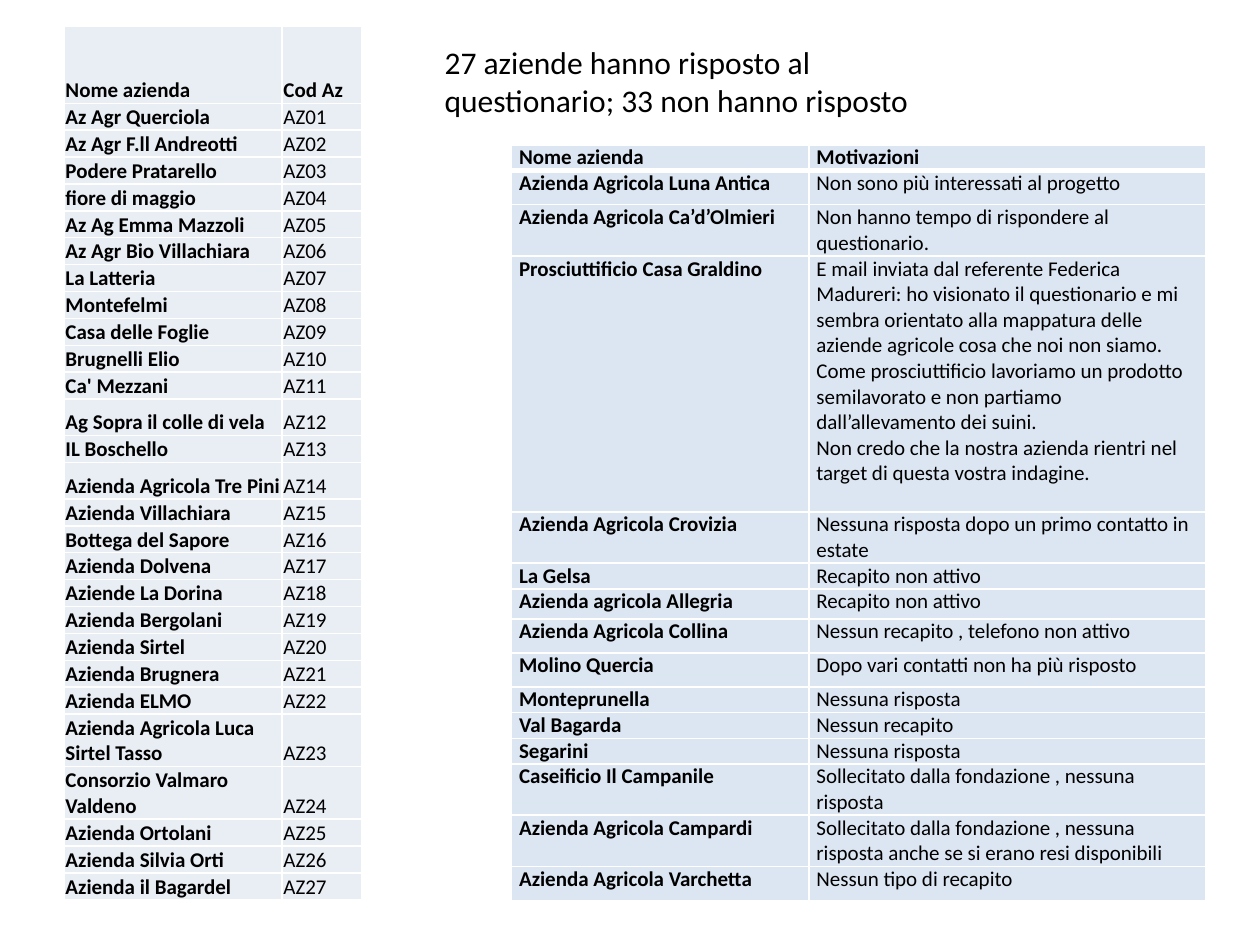
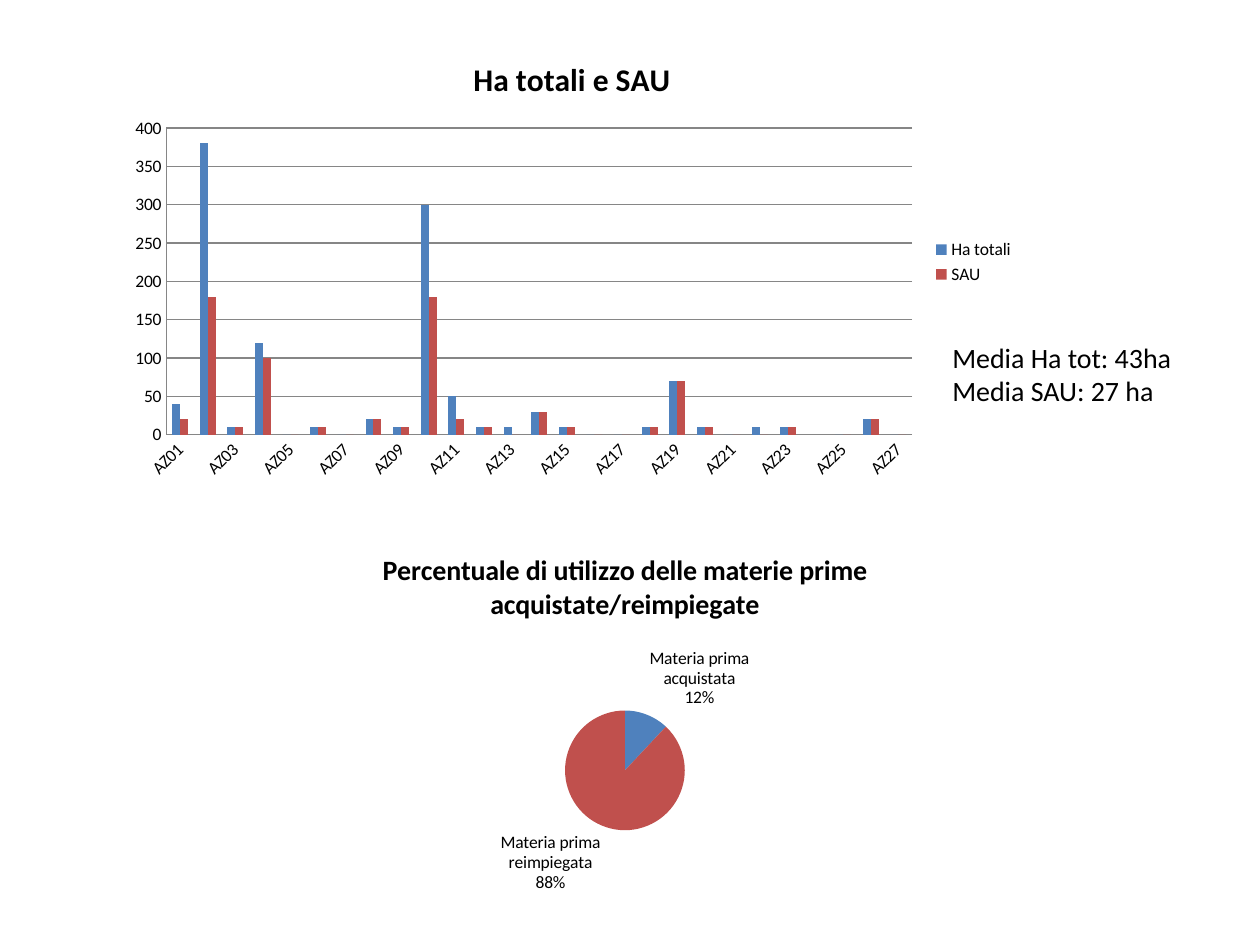
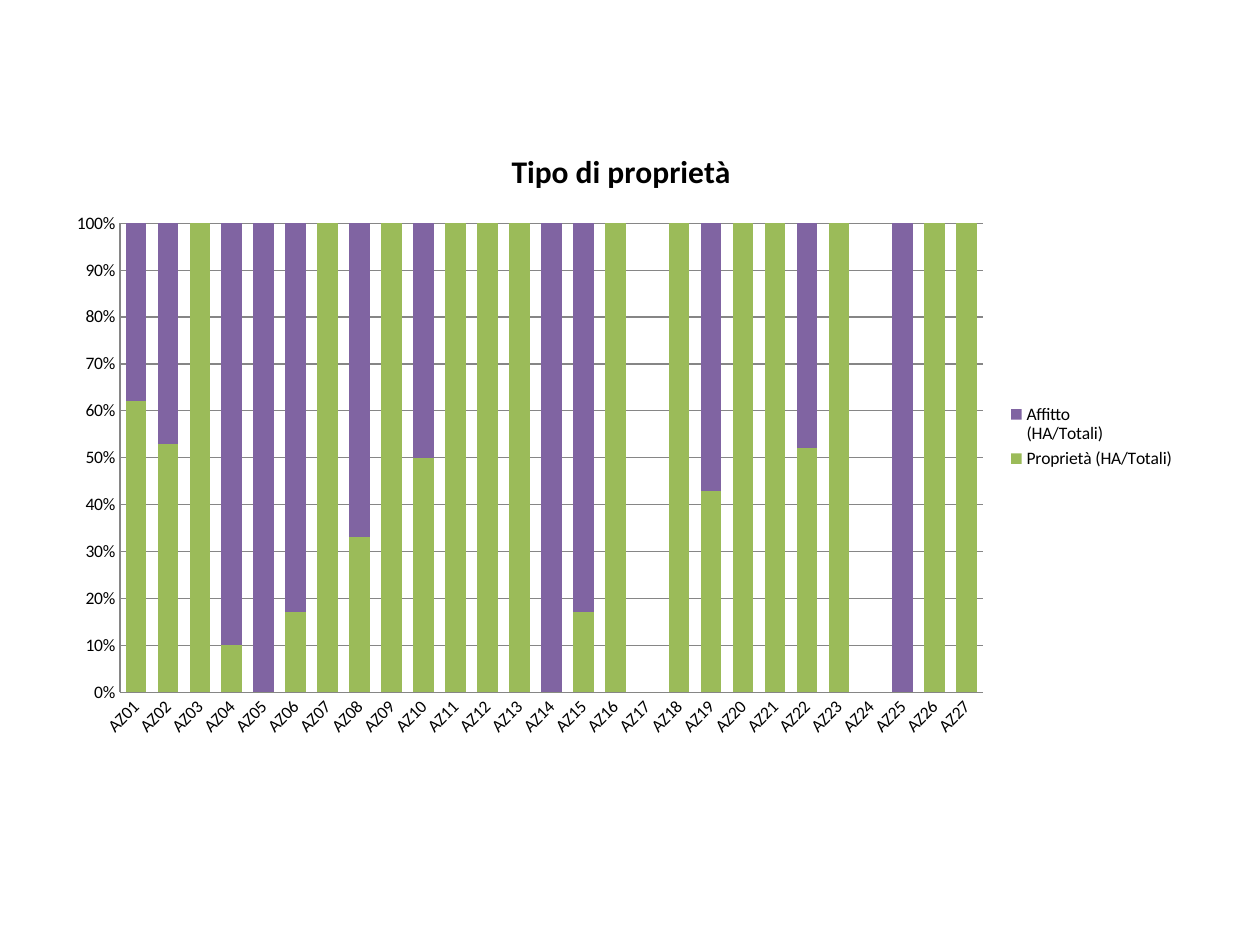
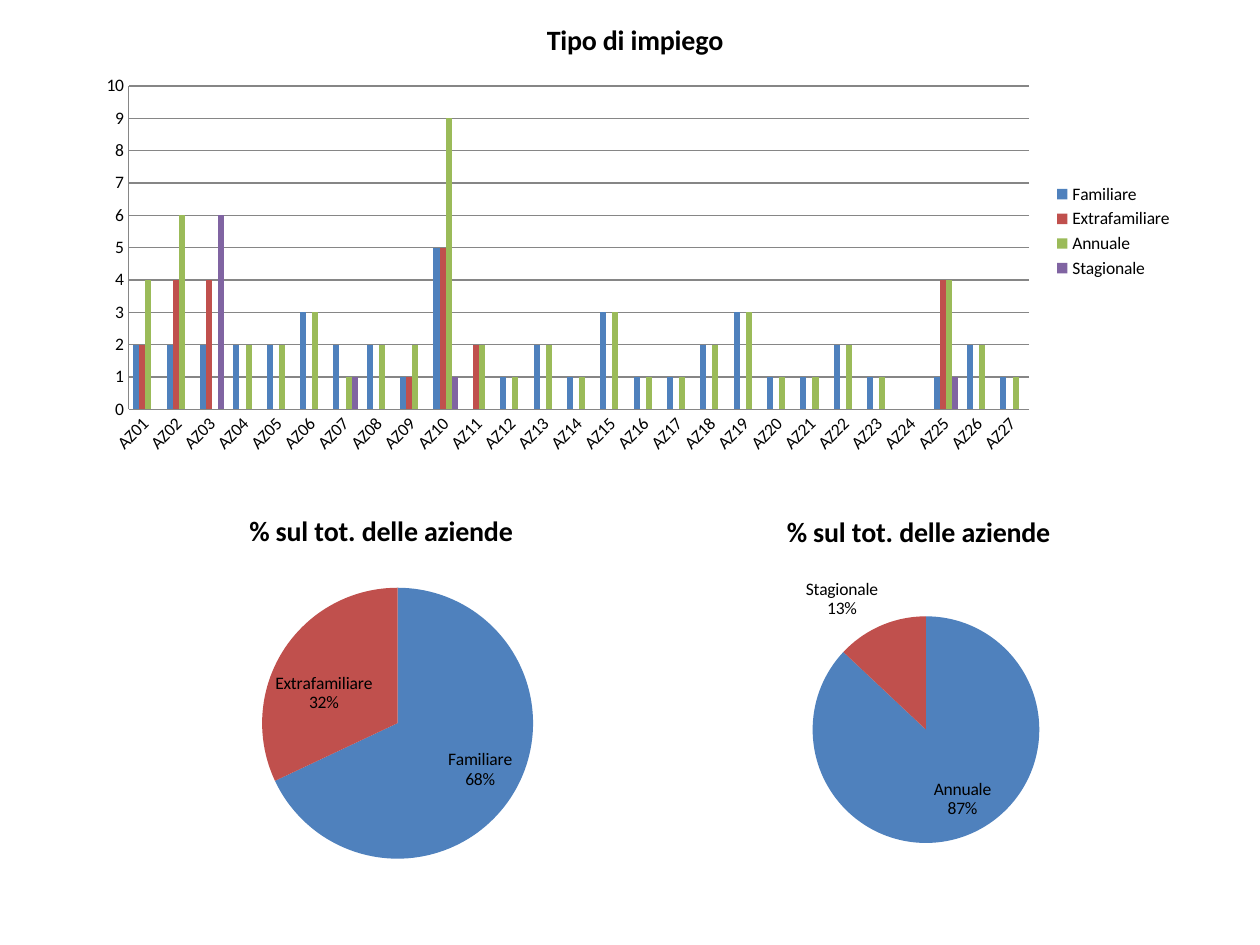
from lxml.etree import SubElement as Sub
from pptx import Presentation
from pptx.chart.data import CategoryChartData as Data
from pptx.dml.color import RGBColor as RGB
from pptx.enum.chart import XL_CHART_TYPE as Kind, XL_LABEL_POSITION as Spot
from pptx.enum.chart import XL_LEGEND_POSITION as Side, XL_TICK_MARK as Tick
from pptx.enum.text import MSO_ANCHOR as Anchor, MSO_AUTO_SIZE as Auto
from pptx.oxml.ns import qn
from pptx.util import Inches, Pt

FONT = "Calibri"
BLACK = RGB(0, 0, 0)
GREY = RGB(0x86, 0x86, 0x86)
PALE = RGB(0xE9, 0xED, 0xF4)
SKY = RGB(0xDC, 0xE6, 0xF2)
BLUE = RGB(0x4F, 0x81, 0xBD)
RED = RGB(0xC0, 0x50, 0x4D)
GREEN = RGB(0x9B, 0xBB, 0x59)
PURPLE = RGB(0x80, 0x64, 0xA2)

deck = Presentation()
deck.slide_width = Inches(10)
deck.slide_height = Inches(7.5)
COL = deck.slide_width // 100
ROW = deck.slide_height // 75


def span(x, y, w, h):
    return int(x * COL), int(y * ROW), int(w * COL), int(h * ROW)


def write(para, text, size, bold=False):
    run = para.add_run()
    run.text = text
    run.font.name = FONT
    run.font.size = Pt(size)
    run.font.bold = bold
    run.font.color.rgb = BLACK


slides = [deck.slides.add_slide(deck.slide_layouts[6]) for _ in range(4)]
codes = [f"AZ{n:02}" for n in range(1, 28)]

farms = [
    "Az Agr Querciola", "Az Agr F.ll Andreotti", "Podere Pratarello",
    "fiore di maggio", "Az Ag Emma Mazzoli", "Az Agr Bio Villachiara",
    "La Latteria", "Montefelmi", "Casa delle Foglie", "Brugnelli Elio",
    "Ca' Mezzani", "Ag Sopra il colle di vela", "IL Boschello",
    "Azienda Agricola Tre Pini", "Azienda Villachiara", "Bottega del Sapore",
    "Azienda Dolvena", "Aziende La Dorina", "Azienda Bergolani",
    "Azienda Sirtel", "Azienda Brugnera", "Azienda ELMO",
    "Azienda Agricola Luca Sirtel Tasso", "Consorzio Valmaro Valdeno",
    "Azienda Ortolani", "Azienda Silvia Orti", "Azienda il Bagardel",
]
mail = (
    "E mail inviata dal referente Federica Madureri: ho visionato il "
    "questionario e mi sembra orientato alla mappatura delle aziende agricole "
    "cosa che noi non siamo.\n"
    "Come prosciuttificio lavoriamo un prodotto semilavorato e non partiamo "
    "dall’allevamento dei suini.\n"
    "Non credo che la nostra azienda rientri nel target di questa vostra "
    "indagine."
)
causes = [
    ("Nome azienda", "Motivazioni"),
    ("Azienda Agricola Luna Antica", "Non sono più interessati al progetto"),
    ("Azienda Agricola Ca’d’Olmieri",
     "Non hanno tempo di rispondere al questionario."),
    ("Prosciuttificio Casa Graldino", mail),
    ("Azienda Agricola Crovizia",
     "Nessuna risposta dopo un primo contatto in estate"),
    ("La Gelsa", "Recapito non attivo"),
    ("Azienda agricola Allegria", "Recapito non attivo"),
    ("Azienda Agricola Collina", "Nessun recapito , telefono non attivo"),
    ("Molino Quercia", "Dopo vari contatti non ha più risposto"),
    ("Monteprunella", "Nessuna risposta"),
    ("Val Bagarda", "Nessun recapito"),
    ("Segarini", "Nessuna risposta"),
    ("Caseificio Il Campanile",
     "Sollecitato dalla fondazione , nessuna risposta"),
    ("Azienda Agricola Campardi",
     "Sollecitato dalla fondazione , nessuna risposta anche se si erano resi "
     "disponibili"),
    ("Azienda Agricola Varchetta", "Nessun tipo di recapito"),
]
tall = {"AZ12", "AZ14", "AZ23", "AZ24"}
grids = [
    ([("Nome azienda", "Cod Az"), *zip(farms, codes)],
     (5.1, 2.1, 23.6, 67.6), (17.3, 6.3),
     [6.1] + [2.9 if code in tall else 1.5 for code in codes],
     PALE, Anchor.BOTTOM, (0.01, 0.01), 1),
    (causes, (40.6, 11.5, 55.1, 59.4), (23.6, 31.5),
     [1.9, 2.7, 4.1, 20.3, 3.8, 1.9, 2.4, 2.7, 2.7, 1.9, 1.9, 1.9, 3.7, 4, 2.7],
     SKY, Anchor.TOP, (0.06, 0), 3),
]
for rows, area, wide, high, tint, anchor, (edge, top), rule in grids:
    table = slides[0].shapes.add_table(len(rows), 2, *span(*area)).table
    table.first_row = table.horz_banding = False
    for column, width in zip(table.columns, wide):
        column.width = int(width * COL)
    for r, (row, texts) in enumerate(zip(table.rows, rows)):
        row.height = int(high[r] * ROW)
        for c, (cell, text) in enumerate(zip(row.cells, texts)):
            cell.margin_left = cell.margin_right = Inches(edge)
            cell.margin_top, cell.margin_bottom = Inches(top), 0
            cell.vertical_anchor = anchor
            props = cell._tc.get_or_add_tcPr()
            for side in ("lnL", "lnR", "lnT", "lnB"):
                thick = (r == 0 and side == "lnB") or (r == 1 and side == "lnT")
                line = Sub(props, qn(f"a:{side}"), w=str(Pt(rule if thick else 1)))
                Sub(Sub(line, qn("a:solidFill")), qn("a:srgbClr"), val="FFFFFF")
            cell.fill.solid()
            cell.fill.fore_color.rgb = tint
            frame = cell.text_frame
            for n, part in enumerate(text.split("\n")):
                para = frame.add_paragraph() if n else frame.paragraphs[0]
                write(para, part, 12, r == 0 or c == 0)

acres = [40, 380, 10, 120, 0, 10, 0, 20, 10, 300, 50, 10, 10, 30, 10, 0, 0, 10,
         70, 10, 0, 10, 10, None, 0, 20, 0]
used = [20, 180, 10, 100, 0, 10, 0, 20, 10, 180, 20, 10, 0, 30, 10, 0, 0, 10,
        70, 10, 0, 0, 10, None, 0, 20, 0]
owned = [62, 53, 100, 10, 0, 17, 100, 33, 100, 50, 100, 100, 100, 0, 17, 100, 0,
         100, 43, 100, 100, 52, 100, None, 0, 100, 100]
rented = [38, 47, 0, 90, 100, 83, 0, 67, 0, 50, 0, 0, 0, 100, 83, 0, 0, 0, 57,
          0, 0, 48, 0, None, 100, 0, 0]
kin = [2, 2, 2, 2, 2, 3, 2, 2, 1, 5, None, 1, 2, 1, 3, 1, 1, 2, 3, 1, 1, 2, 1,
       None, 1, 2, 1]
yearly = [4, 6, None, 2, 2, 3, 1, 2, 2, 9, 2, 1, 2, 1, 3, 1, 1, 2, 3, 1, 1, 2, 1,
          None, 4, 2, 1]
hired = {"AZ01": 2, "AZ02": 4, "AZ03": 4, "AZ09": 1, "AZ10": 5, "AZ11": 2,
         "AZ25": 4}
season = {"AZ03": 6, "AZ07": 1, "AZ10": 1, "AZ25": 1}

bars = [
    (1, "Ha totali e SAU", 18, (9.3, 2.9, 72.2, 35.8), Kind.COLUMN_CLUSTERED, 150,
     [("Ha totali", acres, BLUE), ("SAU", used, RED)]),
    (2, "Tipo di proprietà", 18, (4.3, 9.9, 90, 49.5), Kind.COLUMN_STACKED_100, 55,
     [("Proprietà (HA/Totali)", owned, GREEN),
      ("Affitto \n(HA/Totali)", rented, PURPLE)]),
    (3, "Tipo di impiego", 16, (6.7, 0, 87.4, 36.7), Kind.COLUMN_CLUSTERED, 150,
     [("Familiare", kin, BLUE),
      ("Extrafamiliare", [hired.get(code) for code in codes], RED),
      ("Annuale", yearly, GREEN),
      ("Stagionale", [season.get(code) for code in codes], PURPLE)]),
]
pies = [
    (1, "Percentuale di utilizzo delle materie prime acquistate/reimpiegate",
     (24.6, 42.2, 50, 30),
     {"Materia prima acquistata": 12, "Materia prima reimpiegata": 88}),
    (3, "% sul tot. delle aziende", (3.5, 39.1, 53.5, 31.4),
     {"Familiare": 68, "Extrafamiliare": 32}),
    (3, "% sul tot. delle aziende", (46.9, 39.1, 52, 32.4),
     {"Annuale": 87, "Stagionale": 13}),
]
charts = []

for page, title, area, parts in pies:
    data = Data()
    data.categories = parts.keys()
    data.add_series("Series 1", parts.values())
    chart = slides[page].shapes.add_chart(Kind.PIE, *span(*area), data).chart
    charts.append((chart, title, 16))
    chart.has_legend = False
    plot = chart.plots[0]
    for n, tint in enumerate((BLUE, RED)):
        fill = plot.series[0].points[n].format.fill
        fill.solid()
        fill.fore_color.rgb = tint
    plot.has_data_labels = True
    labels = plot.data_labels
    labels.show_value = False
    labels.show_category_name = labels.show_percentage = True
    labels.number_format, labels.number_format_is_linked = "0%", False
    labels.position = Spot.BEST_FIT
    mark = labels._element.find(qn("c:showBubbleSize"))
    split = Sub(labels._element, qn("c:separator"))
    split.text = "\n"
    mark.addnext(split)

for page, title, size, area, kind, gap, sets in bars:
    data = Data()
    data.categories = codes
    for name, vals, tint in sets:
        data.add_series(name, vals)
    chart = slides[page].shapes.add_chart(kind, *span(*area), data).chart
    charts.append((chart, title, size))
    chart.has_legend = True
    chart.legend.position = Side.RIGHT
    chart.legend.include_in_layout = False
    plot = chart.plots[0]
    plot.vary_by_categories = False
    plot.gap_width = gap
    plot.overlap = 100 if kind == Kind.COLUMN_STACKED_100 else 0
    for one, (name, vals, tint) in zip(plot.series, sets):
        one.format.fill.solid()
        one.format.fill.fore_color.rgb = tint
    for axis in (chart.category_axis, chart.value_axis):
        axis.major_tick_mark = axis.minor_tick_mark = Tick.NONE
        axis.format.line.color.rgb = GREY
    chart.value_axis.has_major_gridlines = True
    chart.value_axis.major_gridlines.format.line.color.rgb = GREY
    if kind == Kind.COLUMN_STACKED_100:
        ticks = chart.value_axis.tick_labels
        ticks.number_format, ticks.number_format_is_linked = "0%", False

for chart, title, size in charts:
    chart.font.name = FONT
    chart.font.size = Pt(10)
    chart.font.color.rgb = BLACK
    chart.has_title = True
    chart.chart_title.include_in_layout = False
    write(chart.chart_title.text_frame.paragraphs[0], title, size, True)

notes = [
    (0, (34.3, 2.9, 40.2, 7.1), 18,
     ["27 aziende hanno risposto al questionario; 33 non hanno risposto"]),
    (1, (74.6, 26.5, 25.2, 6.4), 16, ["Media Ha tot: 43ha", "Media SAU: 27 ha"]),
]
for page, area, size, lines in notes:
    frame = slides[page].shapes.add_textbox(*span(*area)).text_frame
    frame.word_wrap = True
    frame.auto_size = Auto.SHAPE_TO_FIT_TEXT
    for n, line in enumerate(lines):
        para = frame.add_paragraph() if n else frame.paragraphs[0]
        write(para, line, size)

deck.save("out.pptx")
